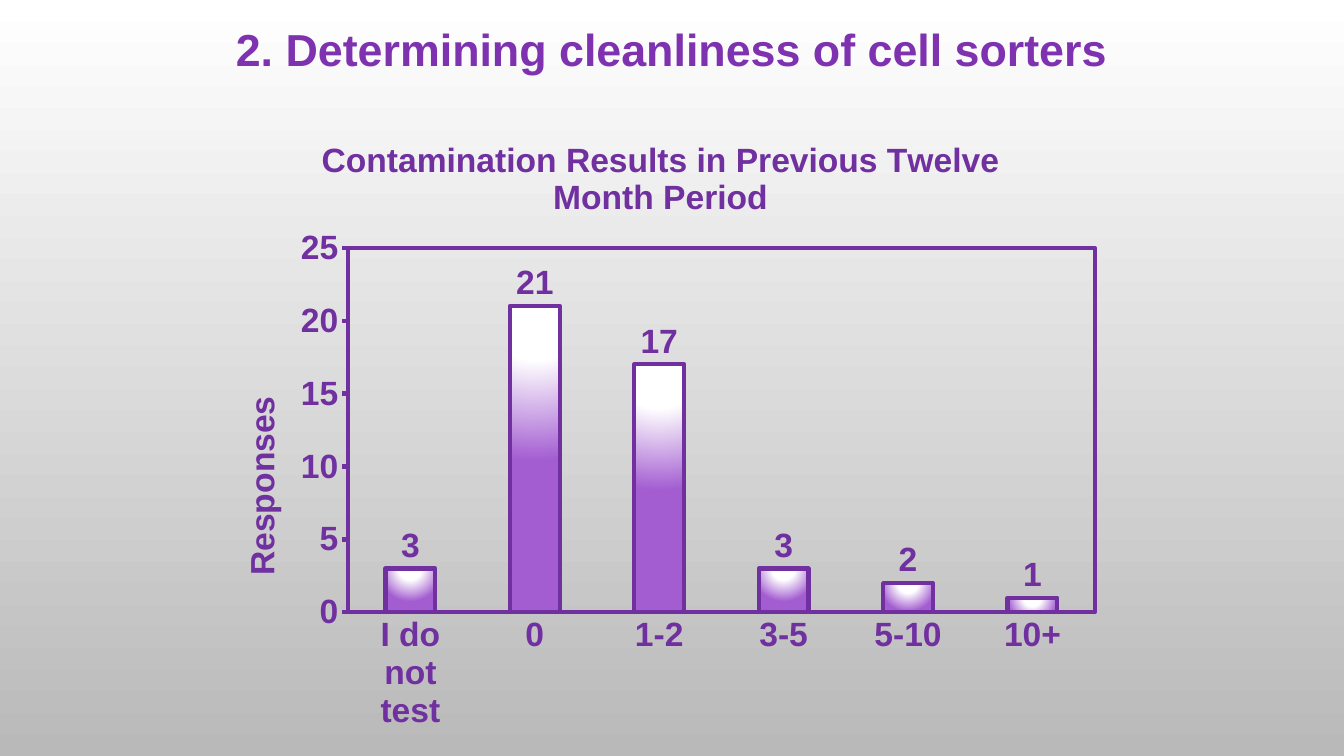
import pptx
import pptx.util
import pptx.chart.data
import pptx.dml.color
import pptx.enum.chart
import pptx.enum.text
import pptx.oxml
import pptx.oxml.ns

Cm = pptx.util.Cm
Pt = pptx.util.Pt
qn = pptx.oxml.ns.qn
NAMESPACES = pptx.oxml.ns.nsdecls("a", "c")

COLOURS = {
    "heading": "7E32B0",
    "chart": "7030A0",
    "bar": "A35DD1",
    "white": "FFFFFF",
    "grey": "B9B9B9",
}


def rgb(name):
    return pptx.dml.color.RGBColor.from_string(COLOURS[name])


def apply(target, values):
    for key, value in values.items():
        setattr(target, key, value)


class SurveySlide:
    font_format = {"name": "Arial", "bold": True}
    line_width = Pt(3)

    def __init__(self, presentation):
        self.slide = presentation.slides.add_slide(presentation.slide_layouts[5])

    def style_font(self, font, size, colour):
        apply(font, {**self.font_format, "size": Pt(size)})
        font.color.rgb = rgb(colour)

    def style_line(self, line):
        line.color.rgb = rgb("chart")
        line.width = self.line_width

    def background(self, top, bottom):
        fill = self.slide.background.fill
        fill.gradient()
        fill.gradient_angle = 270
        for stop, colour, position in zip(fill.gradient_stops, (top, bottom), (0, 1)):
            stop.color.rgb = rgb(colour)
            stop.position = position

    def heading(self, text, left, top, width, height):
        heading = self.slide.shapes.title
        apply(heading, {"left": left, "top": top, "width": width, "height": height})
        frame = heading.text_frame
        apply(frame, {
            "text": text,
            "word_wrap": True,
            "vertical_anchor": pptx.enum.text.MSO_ANCHOR.MIDDLE,
        })
        frame.paragraphs[0].alignment = pptx.enum.text.PP_ALIGN.CENTER
        self.style_font(frame.paragraphs[0].runs[0].font, 32, "heading")

    def column_chart(self, categories, responses, left, top, width, height):
        data = pptx.chart.data.CategoryChartData()
        data.categories = categories
        data.add_series("Series 1", responses)
        kind = pptx.enum.chart.XL_CHART_TYPE.COLUMN_CLUSTERED
        chart = self.slide.shapes.add_chart(kind, left, top, width, height, data).chart
        chart.has_legend = False
        self.style_font(chart.font, 20, "chart")
        return chart

    def chart_text(self, title, text, x, y):
        title.text_frame.text = text
        self.style_font(title.text_frame.paragraphs[0].runs[0].font, 24, "chart")
        self.layout(title._element, 1, x=x, y=y)

    def layout(self, parent, index, **fractions):
        for old in parent.findall(qn("c:layout")):
            parent.remove(old)
        inner = '<c:layoutTarget val="inner"/>' if "w" in fractions else ""
        modes = "".join(f'<c:{side}Mode val="edge"/>' for side in "xy")
        places = "".join(f'<c:{key} val="{value}"/>' for key, value in fractions.items())
        parent.insert(index, pptx.oxml.parse_xml(
            f"<c:layout {NAMESPACES}><c:manualLayout>{inner}{modes}{places}"
            "</c:manualLayout></c:layout>"))

    def axis(self, axis, **values):
        marks = pptx.enum.chart.XL_TICK_MARK
        apply(axis, {"has_major_gridlines": False, "minor_tick_mark": marks.NONE, **values})
        self.style_font(axis.tick_labels.font, 24, "chart")
        self.style_line(axis.format.line)

    def plot_frame(self, chart, **fractions):
        plot_area = chart._chartSpace.chart.plotArea
        self.layout(plot_area, 0, **fractions)
        plot_area.append(pptx.oxml.parse_xml(
            f'<c:spPr {NAMESPACES}><a:noFill/><a:ln w="{self.line_width}"><a:solidFill>'
            f'<a:srgbClr val="{COLOURS["chart"]}"/></a:solidFill></a:ln></c:spPr>'))

    def bars(self, plot):
        apply(plot, {"gap_width": 150, "vary_by_categories": False, "has_data_labels": True})
        apply(plot.data_labels, {
            "show_value": True,
            "position": pptx.enum.chart.XL_LABEL_POSITION.OUTSIDE_END,
        })
        self.style_font(plot.data_labels.font, 24, "chart")
        bar_format = plot.series[0].format
        bar_format.fill.solid()
        bar_format.fill.fore_color.rgb = rgb("bar")
        self.style_line(bar_format.line)
        stops = "".join(
            f'<a:gs pos="{position * 1000}"><a:srgbClr val="{COLOURS[colour]}"/></a:gs>'
            for position, colour in ((0, "white"), (35, "white"), (100, "bar")))
        gradient = pptx.oxml.parse_xml(
            f'<a:gradFill {NAMESPACES} rotWithShape="1"><a:gsLst>{stops}</a:gsLst>'
            '<a:path path="circle"><a:fillToRect l="50000" t="-80000" r="50000" b="180000"/>'
            "</a:path></a:gradFill>")
        properties = plot.series[0]._element.find(qn("c:spPr"))
        properties.replace(properties.find(qn("a:solidFill")), gradient)


def main():
    presentation = pptx.Presentation()
    apply(presentation, {"slide_width": Cm(33.87), "slide_height": Cm(19.05)})
    survey = SurveySlide(presentation)
    survey.background("white", "grey")
    survey.heading("2. Determining cleanliness of cell sorters",
                   Cm(0), Cm(0.41), Cm(33.87), Cm(1.63))

    contamination = survey.column_chart(
        ["I do not test", "0", "1-2", "3-5", "5-10", "10+"], [3, 21, 17, 3, 2, 1],
        Cm(5.21), Cm(2.84), Cm(22.86), Cm(15.9))
    survey.chart_text(contamination.chart_title,
                      "Contamination Results in Previous Twelve Month Period", 0.12, 0.03)
    marks = pptx.enum.chart.XL_TICK_MARK
    survey.axis(contamination.category_axis, major_tick_mark=marks.NONE)
    response_axis = contamination.value_axis
    survey.axis(response_axis, major_tick_mark=marks.OUTSIDE,
                minimum_scale=0, maximum_scale=25, major_unit=5)
    survey.chart_text(response_axis.axis_title, "Responses", 0.03, 0.44)
    rotation = response_axis.axis_title._element.find(".//" + qn("a:bodyPr"))
    for key, value in {"rot": "-5400000", "vert": "horz"}.items():
        rotation.set(key, value)
    survey.bars(contamination.plots[0])
    survey.plot_frame(contamination, x=0.156, y=0.214, w=0.823, h=0.578)
    presentation.save("out.pptx")


if __name__ == "__main__":
    main()
